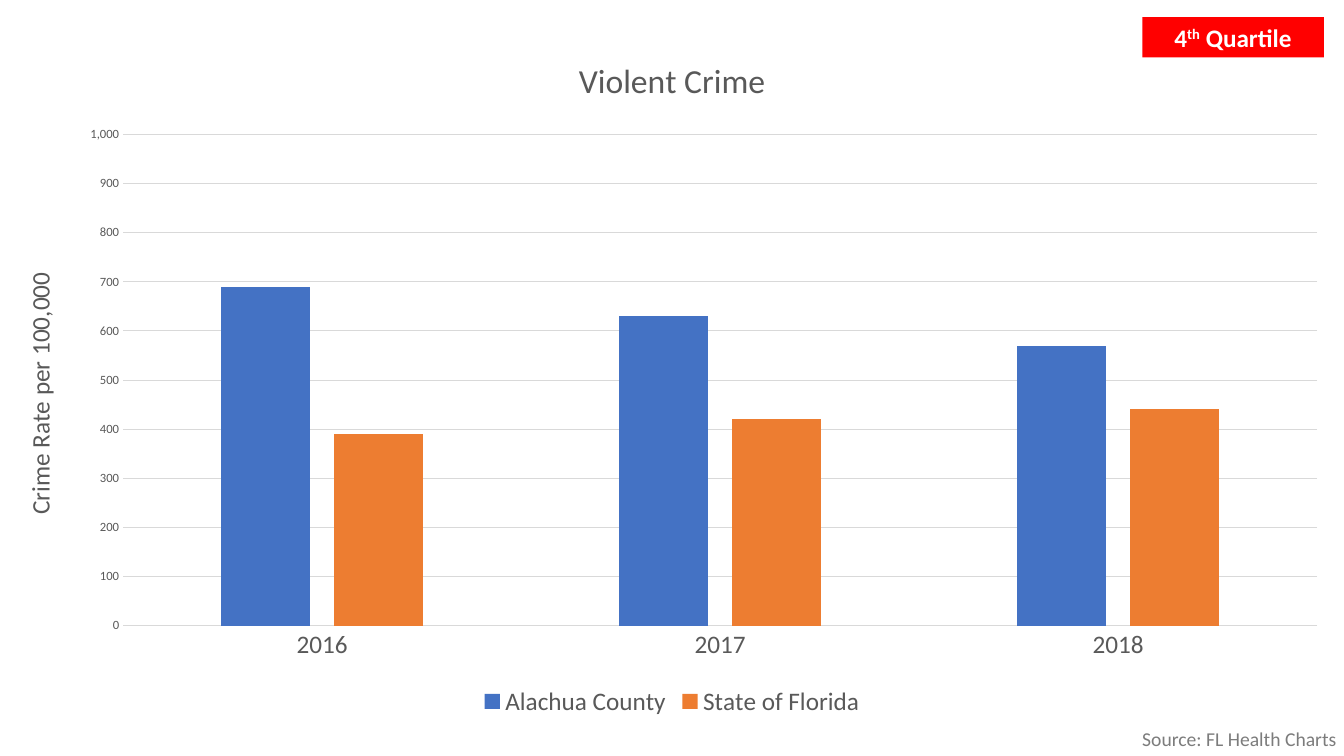
from pptx import Presentation
from pptx.chart.data import CategoryChartData as Data
from pptx.dml.color import RGBColor
from pptx.enum.chart import XL_CHART_TYPE as Kind, XL_LEGEND_POSITION as Spot, XL_TICK_MARK as Tick
from pptx.enum.shapes import MSO_SHAPE as Form
from pptx.enum.text import MSO_ANCHOR as Anchor, PP_ALIGN as Align
from pptx.util import Inches, Pt

WIDE, HIGH = 13.33, 7.5
FACE, GRAY, RULE = "Calibri", "595959", "D9D9D9"
YEARS = ["2016", "2017", "2018"]
RATES = {
    "Alachua County": ("4472C4", [690, 630, 570]),
    "State of Florida": ("ED7D31", [390, 420, 440]),
}
TITLE, UNIT = "Violent Crime", "Crime Rate per 100,000"
SOURCE = "Source: FL Health Charts"
BADGE = [("4", 0), ("th", 30000), (" Quartile", 0)]
PLACES = {
    "source": (11.23, 7.16, 2.21, 0.34),
    "chart": (0, 0.33, WIDE, 6.83),
    "badge": (11.33, 0.17, 1.8, 0.4),
}


def tint(code):
    return RGBColor.from_string(code)


def place(name):
    return [Inches(n) for n in PLACES[name]]


def put(item, **look):
    for key, value in look.items():
        setattr(item, key, value)


def style(font, size, code=GRAY, bold=False):
    put(font, name=FACE, size=Pt(size), bold=bold)
    font.color.rgb = tint(code)


def stroke(line):
    line.color.rgb = tint(RULE)
    line.width = Pt(0.75)


def label(owner, text, size):
    frame = owner.text_frame
    frame.text = text
    style(frame.paragraphs[0].runs[0].font, size)


def draw_chart(slide):
    data = Data(number_format="#,##0")
    data.categories = YEARS
    for name, (code, rates) in RATES.items():
        data.add_series(name, rates)
    chart = slide.shapes.add_chart(Kind.COLUMN_CLUSTERED, *place("chart"), data).chart
    style(chart.font, 10, "000000")
    put(chart, has_title=True, has_legend=True)
    label(chart.chart_title, TITLE, 24)
    put(chart.legend, position=Spot.BOTTOM, include_in_layout=False)
    style(chart.legend.font, 18)

    plot = chart.plots[0]
    put(plot, gap_width=219, overlap=-27, vary_by_categories=False)
    for bar, (code, rates) in zip(plot.series, RATES.values()):
        bar.format.fill.solid()
        bar.format.fill.fore_color.rgb = tint(code)
        bar.invert_if_negative = False

    years, scale = chart.category_axis, chart.value_axis
    for axis, size in ((years, 18), (scale, 9)):
        put(axis, major_tick_mark=Tick.NONE, minor_tick_mark=Tick.NONE)
        style(axis.tick_labels.font, size)
    stroke(years.format.line)
    put(scale, minimum_scale=0, maximum_scale=1000, major_unit=100)
    put(scale.tick_labels, number_format="#,##0", number_format_is_linked=False)
    scale.format.line.fill.background()
    stroke(scale.major_gridlines.format.line)
    label(scale.axis_title, UNIT, 18)


def draw_source(slide):
    frame = slide.shapes.add_textbox(*place("source")).text_frame
    put(frame, word_wrap=True)
    run = frame.paragraphs[0].add_run()
    run.text = SOURCE
    style(run.font, 14, "7C7C7C")


def draw_badge(slide):
    box = slide.shapes.add_shape(Form.RECTANGLE, *place("badge"))
    box.shadow.inherit = False
    box.fill.solid()
    box.fill.fore_color.rgb = tint("FF0000")
    box.line.fill.background()
    put(box.text_frame, word_wrap=True, vertical_anchor=Anchor.MIDDLE)
    line = box.text_frame.paragraphs[0]
    line.alignment = Align.CENTER
    for text, lift in BADGE:
        run = line.add_run()
        run.text = text
        style(run.font, 18, "FFFFFF", True)
        if lift:
            run.font._element.set("baseline", str(lift))


def main():
    deck = Presentation()
    put(deck, slide_width=Inches(WIDE), slide_height=Inches(HIGH))
    slide = deck.slides.add_slide(deck.slide_layouts[6])
    for draw in (draw_source, draw_chart, draw_badge):
        draw(slide)
    deck.save("out.pptx")


if __name__ == "__main__":
    main()
